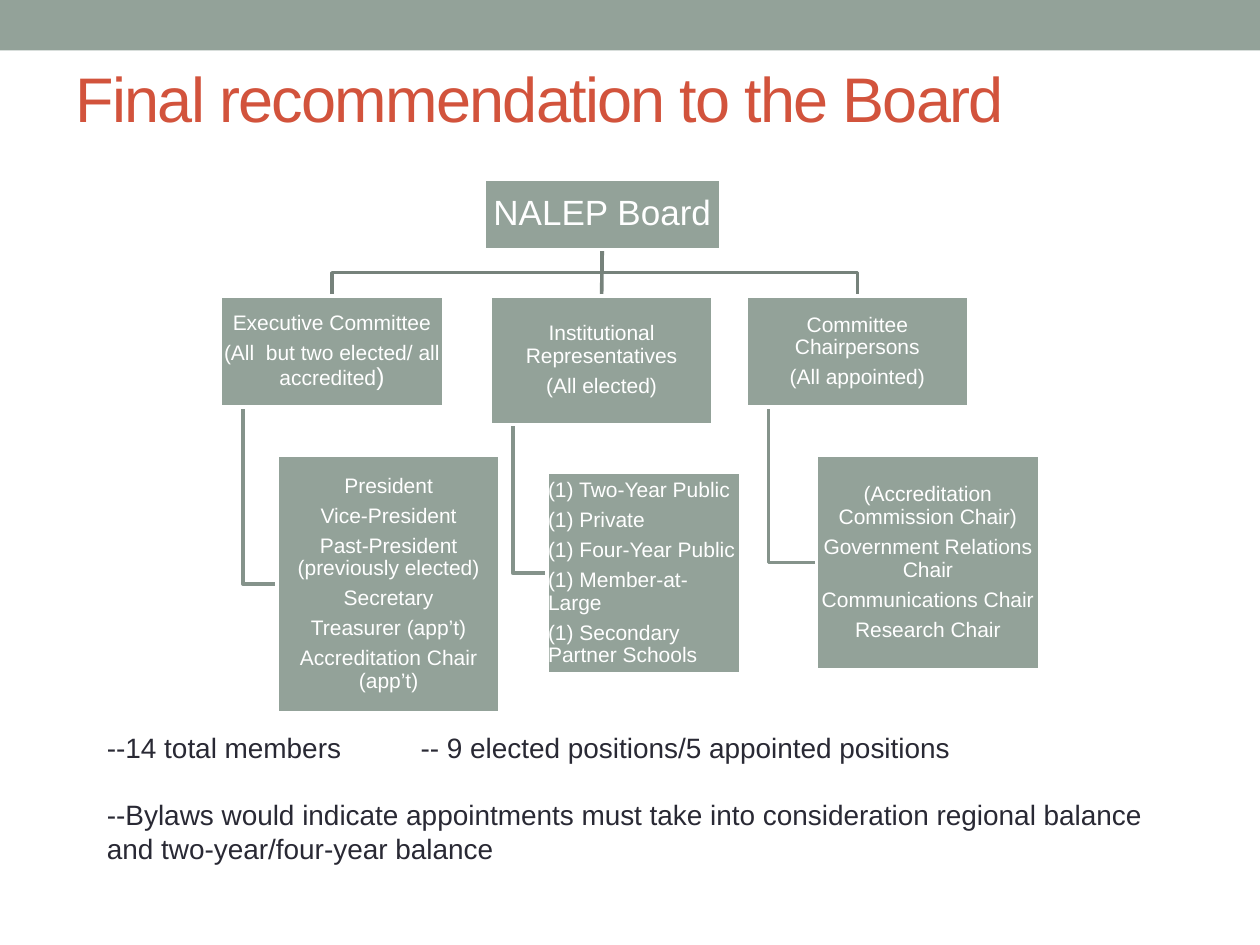
from lxml.etree import SubElement
from pptx import Presentation
from pptx.dml.color import RGBColor
from pptx.enum.shapes import MSO_CONNECTOR as Connector, MSO_SHAPE as Shape
from pptx.enum.text import MSO_ANCHOR as Anchor, PP_ALIGN as Align
from pptx.oxml.ns import qn
from pptx.util import Emu, Inches, Pt

SAGE = RGBColor(0x93, 0xA2, 0x99)
TRUNK = RGBColor(0x76, 0x82, 0x7B)
BRANCH = RGBColor(0x85, 0x93, 0x8B)
RUST = RGBColor(0xD2, 0x53, 0x3C)
INK = RGBColor(0x29, 0x29, 0x34)
WHITE = RGBColor(0xFF, 0xFF, 0xFF)

COLUMNS, ROWS = 100, 75
LINE = Pt(2.08)
BOARD = (38.4, 14.2, 18.8, 5.6)
HEAD_TOP, BOX_WIDTH = 23.5, 17.7
HANGER_INDENT = 1.8

BRANCHES = [
    {
        "head": (17.5, HEAD_TOP, BOX_WIDTH, 8.8),
        "title": ["Executive Committee",
                  [("(All  but two elected/ all accredited", 12), (")", 14)]],
        "detail": (22, 36.1, BOX_WIDTH, 20.5),
        "members": ["President", "Vice-President",
                    "Past-President (previously elected)", "Secretary",
                    "Treasurer (app’t)", "Accreditation Chair (app’t)"],
        "align": Align.CENTER,
    },
    {
        "head": (38.9, HEAD_TOP, BOX_WIDTH, 10.2),
        "title": ["Institutional Representatives", "(All elected)"],
        "detail": (43.4, 37.5, 15.4, 16),
        "members": ["(1) Two-Year Public", "(1) Private",
                    "(1) Four-Year Public", "(1) Member-at-Large",
                    "(1) Secondary Partner Schools"],
        "align": Align.LEFT,
    },
    {
        "head": (59.2, HEAD_TOP, BOX_WIDTH, 8.8),
        "title": ["Committee Chairpersons", "(All appointed)"],
        "detail": (64.8, 36.1, BOX_WIDTH, 17.1),
        "members": ["(Accreditation Commission Chair)",
                    "Government Relations Chair", "Communications Chair",
                    "Research Chair"],
        "align": Align.CENTER,
    },
]


class Page:
    font = "Arial"

    def __init__(self, deck):
        self.deck = deck
        self.slide = deck.slides.add_slide(deck.slide_layouts[5])
        self.shapes = self.slide.shapes

    def x(self, columns):
        return Emu(round(self.deck.slide_width * columns / COLUMNS))

    def y(self, rows):
        return Emu(round(self.deck.slide_height * rows / ROWS))

    def place(self, left, top, width, height):
        return self.x(left), self.y(top), self.x(width), self.y(height)

    def apply(self, target, values):
        for name, value in values.items():
            setattr(target, name, value)

    def fill_text(self, frame, paragraphs, size, color, **format_values):
        frame.word_wrap = True
        for index, runs in enumerate(paragraphs):
            para = frame.add_paragraph() if index else frame.paragraphs[0]
            self.apply(para, format_values)
            for text, points in [(runs, size)] if isinstance(runs, str) else runs:
                span = para.add_run()
                span.text = text
                self.apply(span.font, {"name": self.font, "size": Pt(points)})
                span.font.color.rgb = color

    def title(self, text, area):
        box = self.shapes.title
        left, top, width, height = self.place(*area)
        self.apply(box, {"left": left, "top": top,
                         "width": width, "height": height})
        box.text_frame.vertical_anchor = Anchor.MIDDLE
        self.fill_text(box.text_frame, [text], 36, RUST, alignment=Align.LEFT)
        span = box.text_frame.paragraphs[0].runs[0]
        span.font._element.set("spc", "-100")

    def band(self, area):
        box = self.shapes.add_shape(Shape.RECTANGLE, *self.place(*area))
        box.shadow.inherit = False
        box.fill.solid()
        box.fill.fore_color.rgb = SAGE
        box.line.fill.background()
        return box

    def box(self, area, paragraphs, size=12, align=Align.CENTER):
        box = self.band(area)
        box.line.color.rgb = WHITE
        box.line.width = LINE
        inset = Inches(0.01)
        self.apply(box.text_frame, {
            "vertical_anchor": Anchor.MIDDLE,
            "margin_left": inset, "margin_right": inset,
            "margin_top": inset, "margin_bottom": inset,
        })
        self.fill_text(box.text_frame, paragraphs, size, WHITE, alignment=align,
                       line_spacing=0.9, space_after=Pt(size * 0.35))
        return box

    def elbow(self, points, color):
        start, *rest = [(self.x(column), self.y(row)) for column, row in points]
        builder = self.shapes.build_freeform(*start)
        builder.add_line_segments(rest, close=False)
        line = builder.convert_to_shape()
        line.shadow.inherit = False
        line.fill.background()
        line.line.color.rgb = color
        line.line.width = LINE

    def straight(self, color):
        line = self.shapes.add_connector(Connector.STRAIGHT, 0, 0, 0, 0)
        line.line.color.rgb = color
        line.line.width = LINE
        SubElement(line._element.spPr, qn("a:effectLst"))
        return line

    def notes(self, area, paragraphs, tab):
        box = self.shapes.add_textbox(*self.place(*area))
        self.fill_text(box.text_frame, paragraphs, 16, INK, space_after=Pt(19))
        stops = SubElement(
            box.text_frame.paragraphs[0]._p.get_or_add_pPr(), qn("a:tabLst"))
        SubElement(stops, qn("a:tab"), pos=str(self.x(tab)), algn="l")


def middle(start, length):
    return start + length / 2


def draw_chart(page):
    left, top, width, height = BOARD
    board_x, board_bottom = middle(left, width), top + height
    bus = middle(board_bottom, HEAD_TOP - board_bottom)

    trunk = page.straight(TRUNK)
    for branch in BRANCHES:
        left, top, width, height = branch["head"]
        detail_left, detail_top, _, detail_height = branch["detail"]
        hanger = left + HANGER_INDENT
        detail_y = middle(detail_top, detail_height)
        page.elbow([(hanger, top + height), (hanger, detail_y),
                    (detail_left, detail_y)], BRANCH)
        if branch is not BRANCHES[1]:
            head_x = middle(left, width)
            page.elbow([(board_x, board_bottom), (board_x, bus),
                        (head_x, bus), (head_x, top)], TRUNK)

    board = page.box(BOARD, ["NALEP Board"], size=20)
    heads = []
    for branch in BRANCHES:
        heads.append(page.box(branch["head"], branch["title"]))
        page.box(branch["detail"], branch["members"], align=branch["align"])
    trunk.begin_connect(board, 2)
    trunk.end_connect(heads[1], 0)


def main():
    deck = Presentation()
    deck.slide_width, deck.slide_height = Inches(10), Inches(7.5)
    page = Page(deck)
    page.band((0, 0, COLUMNS, 4))
    page.title("Final recommendation to the Board", (5, 3, 90, 9.5))
    draw_chart(page)
    page.notes((7.5, 57.5, 87.5, 14.8), [
        "--14 total members\t-- 9 elected positions/5 appointed positions",
        "--Bylaws would indicate appointments must take into consideration "
        "regional balance and two-year/four-year balance",
    ], tab=24.9)
    deck.save("out.pptx")


if __name__ == "__main__":
    main()
